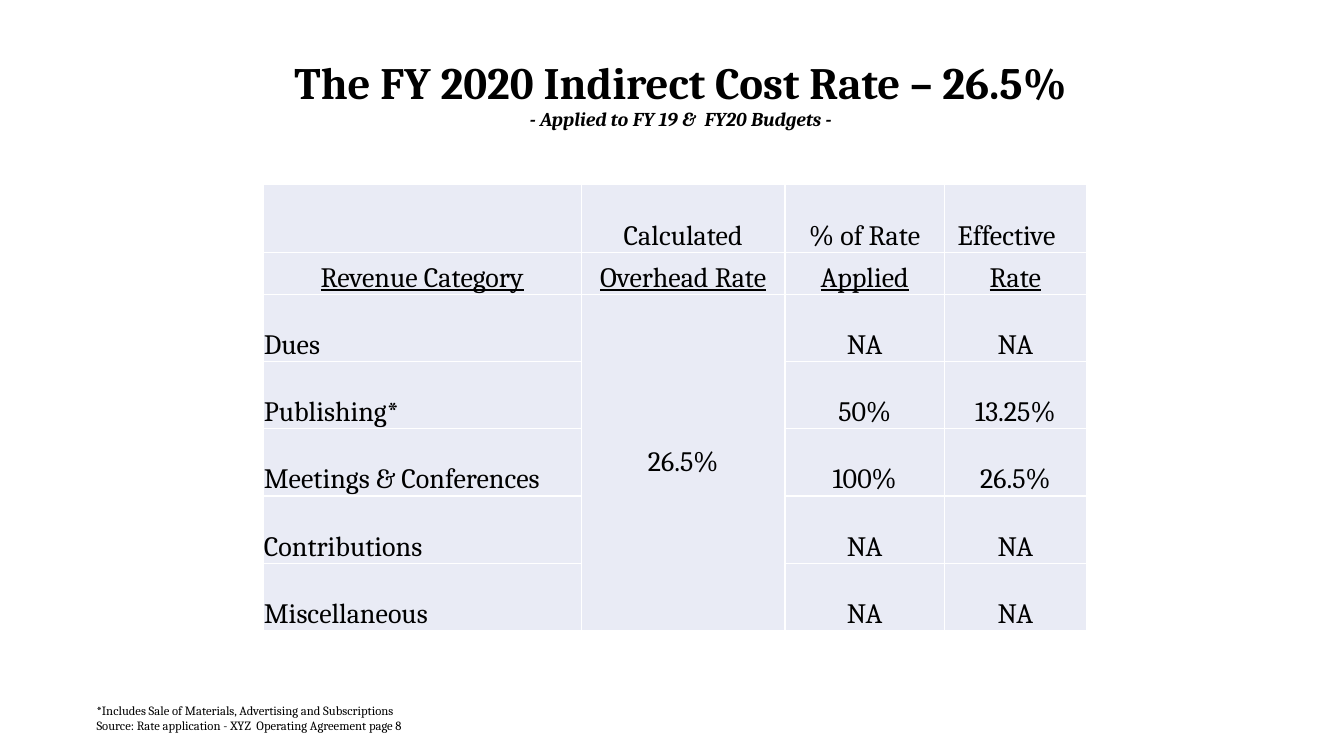
from lxml.etree import SubElement
from pptx import Presentation
from pptx.dml.color import RGBColor
from pptx.enum.text import MSO_ANCHOR, PP_ALIGN
from pptx.oxml.ns import qn
from pptx.util import Pt

TITLE = "The FY 2020 Indirect Cost Rate – 26.5%"
SUBTITLE = "- Applied to FY 19 &  FY20 Budgets -"
FOOTNOTES = [
    "*Includes Sale of Materials, Advertising and Subscriptions",
    "Source: Rate application - XYZ  Operating Agreement page 8",
]
RATES = [
    ("", "Calculated", "% of Rate", "Effective"),
    ("Revenue Category", "Overhead Rate", "Applied", "Rate"),
    ("Dues", "26.5%", "NA", "NA"),
    ("Publishing*", "", "50%", "13.25%"),
    ("Meetings & Conferences", "", "100%", "26.5%"),
    ("Contributions", "", "NA", "NA"),
    ("Miscellaneous", "", "NA", "NA"),
]
COLUMN_WIDTHS = [227.5, 145.5, 113.8, 101.5]
TALL_ROW, SHORT_ROW = 48.1, 30
UNDERLINED_ROW, FIRST_RATE_ROW, OVERHEAD_COLUMN = 1, 2, 1
FONT = "Cambria"
BLACK = RGBColor(0, 0, 0)
WHITE = RGBColor(255, 255, 255)
PALE_BLUE = RGBColor(0xE9, 0xEB, 0xF5)


def write(para, text, size, align=PP_ALIGN.LEFT, bold=None, italic=None, underline=None):
    para.alignment = align
    span = para.add_run()
    span.text = text
    font = span.font
    font.name, font.size = FONT, Pt(size)
    font.bold, font.italic, font.underline = bold, italic, underline
    font.color.rgb = BLACK


def add_frame(page, left, top, width, height, anchor):
    frame = page.shapes.add_textbox(Pt(left), Pt(top), Pt(width), Pt(height)).text_frame
    frame.word_wrap = True
    frame.vertical_anchor = anchor
    return frame


def style_cell(cell):
    properties = cell._tc.get_or_add_tcPr()
    for side in ("a:lnL", "a:lnR", "a:lnT", "a:lnB"):
        line = SubElement(properties, qn(side), w=str(Pt(1)))
        fill = SubElement(line, qn("a:solidFill"))
        SubElement(fill, qn("a:srgbClr"), val=str(WHITE))
    cell.fill.solid()
    cell.fill.fore_color.rgb = PALE_BLUE
    cell.margin_left = cell.margin_right = cell.margin_top = Pt(0.7)
    cell.margin_bottom = Pt(0)
    cell.vertical_anchor = MSO_ANCHOR.BOTTOM


def add_title(page):
    para = add_frame(page, 169.2, 28.8, 634.3, 79.2, MSO_ANCHOR.MIDDLE).paragraphs[0]
    para.line_spacing = 0.9
    write(para, TITLE, 32, align=PP_ALIGN.CENTER, bold=True)
    para.add_line_break()
    write(para, SUBTITLE, 14, align=PP_ALIGN.CENTER, bold=True, italic=True)


def add_rates(page):
    heights = [SHORT_ROW if row == UNDERLINED_ROW else TALL_ROW for row in range(len(RATES))]
    table = page.shapes.add_table(
        len(RATES), len(COLUMN_WIDTHS), Pt(187.8), Pt(132),
        Pt(sum(COLUMN_WIDTHS)), Pt(sum(heights)),
    ).table
    table.first_row = table.horz_banding = False
    for column, width in zip(table.columns, COLUMN_WIDTHS):
        column.width = Pt(width)
    for row, (height, texts) in enumerate(zip(heights, RATES)):
        table.rows[row].height = Pt(height)
        for column, text in enumerate(texts):
            cell = table.cell(row, column)
            style_cell(cell)
            if not text:
                continue
            is_category = column == 0 and row >= FIRST_RATE_ROW
            is_indented = text == "Effective"
            if is_indented:
                cell.margin_left = Pt(9.5)
            write(cell.text_frame.paragraphs[0], text, 20,
                  align=PP_ALIGN.LEFT if is_category or is_indented else PP_ALIGN.CENTER,
                  underline=True if row == UNDERLINED_ROW else None)
    overhead = table.cell(FIRST_RATE_ROW, OVERHEAD_COLUMN)
    overhead.merge(table.cell(len(RATES) - 1, OVERHEAD_COLUMN))
    overhead.vertical_anchor = MSO_ANCHOR.MIDDLE


def add_footnotes(page):
    frame = add_frame(page, 61.9, 498.2, 705.6, 28.8, MSO_ANCHOR.TOP)
    for index, text in enumerate(FOOTNOTES):
        write(frame.add_paragraph() if index else frame.paragraphs[0], text, 9)


def main():
    deck = Presentation()
    deck.slide_width, deck.slide_height = Pt(960), Pt(540)
    page = deck.slides.add_slide(deck.slide_layouts[6])
    add_title(page)
    add_footnotes(page)
    add_rates(page)
    deck.save("out.pptx")


if __name__ == "__main__":
    main()
